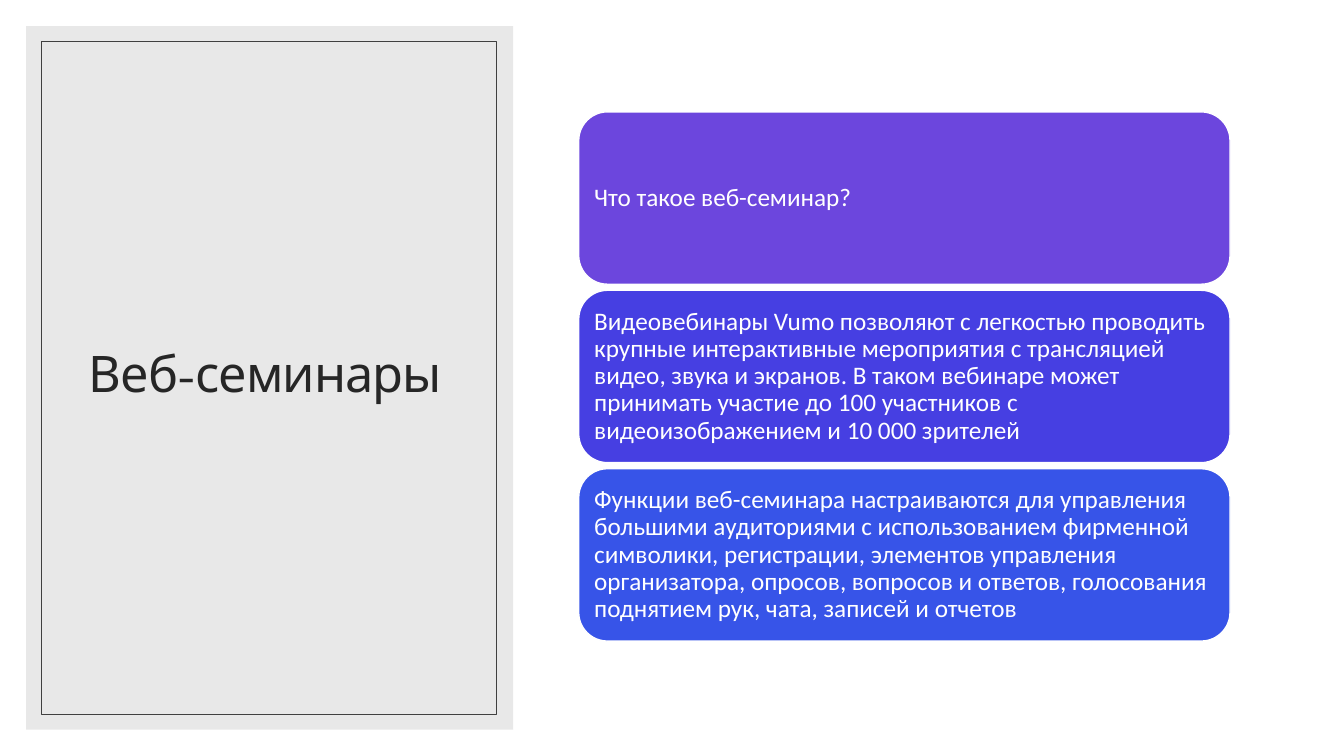
"""Build the webinar slide: a framed title panel beside three stacked cards."""
from lxml import etree
from pptx import Presentation
from pptx import util as u
from pptx.dml.color import RGBColor
from pptx.enum import shapes, text
from pptx.oxml.ns import qn

COLORS = {
    "panel": "D9D9D9",
    "frame": "404040",
    "title": "262626",
    "white": "FFFFFF",
}
CARDS = [
    ("6C46DD", "Что такое веб-семинар?"),
    ("463FE2", "Видеовебинары Vumo позволяют с легкостью проводить крупные "
               "интерактивные мероприятия с трансляцией видео, звука и экранов. "
               "В таком вебинаре может принимать участие до 100 участников "
               "с видеоизображением и 10 000 зрителей"),
    ("3754E8", "Функции веб-семинара настраиваются для управления большими "
               "аудиториями с использованием фирменной символики, регистрации, "
               "элементов управления организатора, опросов, вопросов и ответов, "
               "голосования поднятием рук, чата, записей и отчетов"),
]
CARD_LEFT, CARD_TOP, CARD_W, CARD_H, CARD_STEP = 5.74, 1.11, 6.46, 1.71, 1.77


def set_attrs(obj, values):
    for name, value in values.items():
        setattr(obj, name, value)


def place(sp, left, top, width, height):
    set_attrs(sp, {"left": u.Inches(left), "top": u.Inches(top),
                   "width": u.Inches(width), "height": u.Inches(height)})


def add_box(s, kind, box, fill=None, line=None, weight=1):
    sp = s.shapes.add_shape(kind, *map(u.Inches, box))
    sp.shadow.inherit = False
    if fill:
        sp.fill.solid()
        sp.fill.fore_color.rgb = RGBColor.from_string(fill)
    else:
        sp.fill.background()
    if line:
        sp.line.color.rgb = RGBColor.from_string(line)
        sp.line.width = u.Pt(weight)
    else:
        sp.line.fill.background()
    return sp


def set_alpha(sp, percent):
    color = sp.element.spPr.find(qn("a:solidFill"))[0]
    etree.SubElement(color, qn("a:alpha")).set("val", str(percent * 1000))


def write_text(sp, words, font, size, color, align, inset):
    tf = sp.text_frame
    margins = dict.fromkeys(
        ("margin_left", "margin_top", "margin_right", "margin_bottom"), u.Inches(inset))
    set_attrs(tf, {"word_wrap": True, "auto_size": text.MSO_AUTO_SIZE.NONE,
                   "vertical_anchor": text.MSO_ANCHOR.MIDDLE, **margins})
    p = tf.paragraphs[0]
    set_attrs(p, {"alignment": align, "line_spacing": 0.9})
    r = p.add_run()
    r.text = words
    set_attrs(r.font, {"name": font, "size": u.Pt(size), "bold": False})
    r.font.color.rgb = RGBColor.from_string(color)
    return r


def add_title(s, words):
    sp = s.shapes.title
    s.shapes.element.append(sp.element)
    place(sp, 0.63, 0.61, 4.12, 6.24)
    r = write_text(sp, words, "League Spartan", 36, COLORS["title"],
                   text.PP_ALIGN.CENTER, 0.1)
    r.font.element.set("spc", "-70") if hasattr(r.font, "element") else \
        r._r.get_or_add_rPr().set("spc", "-70")


def add_card(s, index, fill, words):
    box = (CARD_LEFT, CARD_TOP + index * CARD_STEP, CARD_W, CARD_H)
    sp = add_box(s, shapes.MSO_SHAPE.ROUNDED_RECTANGLE, box, fill, COLORS["white"])
    write_text(sp, words, "Calibri", 18, COLORS["white"], text.PP_ALIGN.LEFT, 0.07)


def main():
    prs = Presentation()
    set_attrs(prs, {"slide_width": u.Inches(13.33), "slide_height": u.Inches(7.5)})
    s = prs.slides.add_slide(prs.slide_layouts[5])
    s.background.fill.solid()
    s.background.fill.fore_color.rgb = RGBColor.from_string(COLORS["white"])

    rect = shapes.MSO_SHAPE.RECTANGLE
    panel = add_box(s, rect, (0.26, 0.26, 4.83, 6.98), COLORS["panel"])
    set_alpha(panel, 60)
    add_title(s, "Веб-семинары ")
    add_box(s, rect, (0.41, 0.41, 4.51, 6.68), line=COLORS["frame"], weight=0.5)
    for index, (fill, words) in enumerate(CARDS):
        add_card(s, index, fill, words)
    prs.save("out.pptx")


if __name__ == "__main__":
    main()
